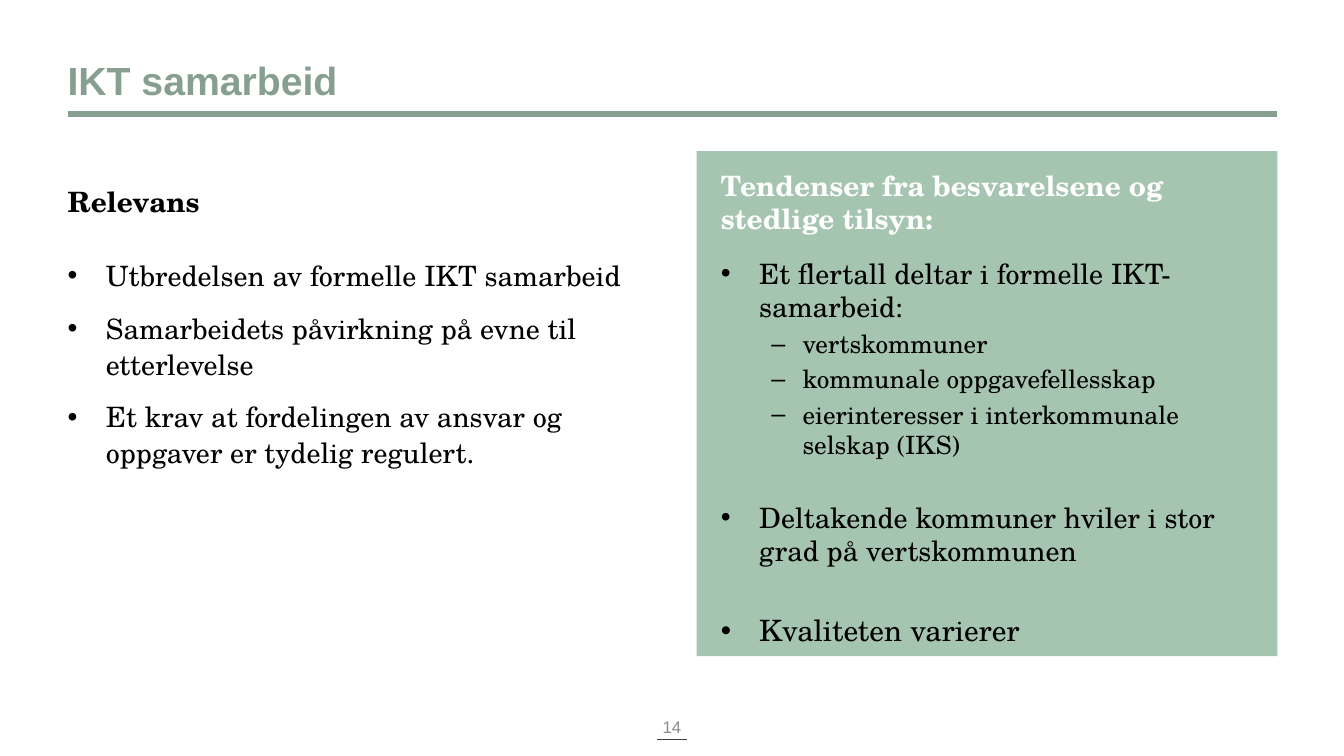
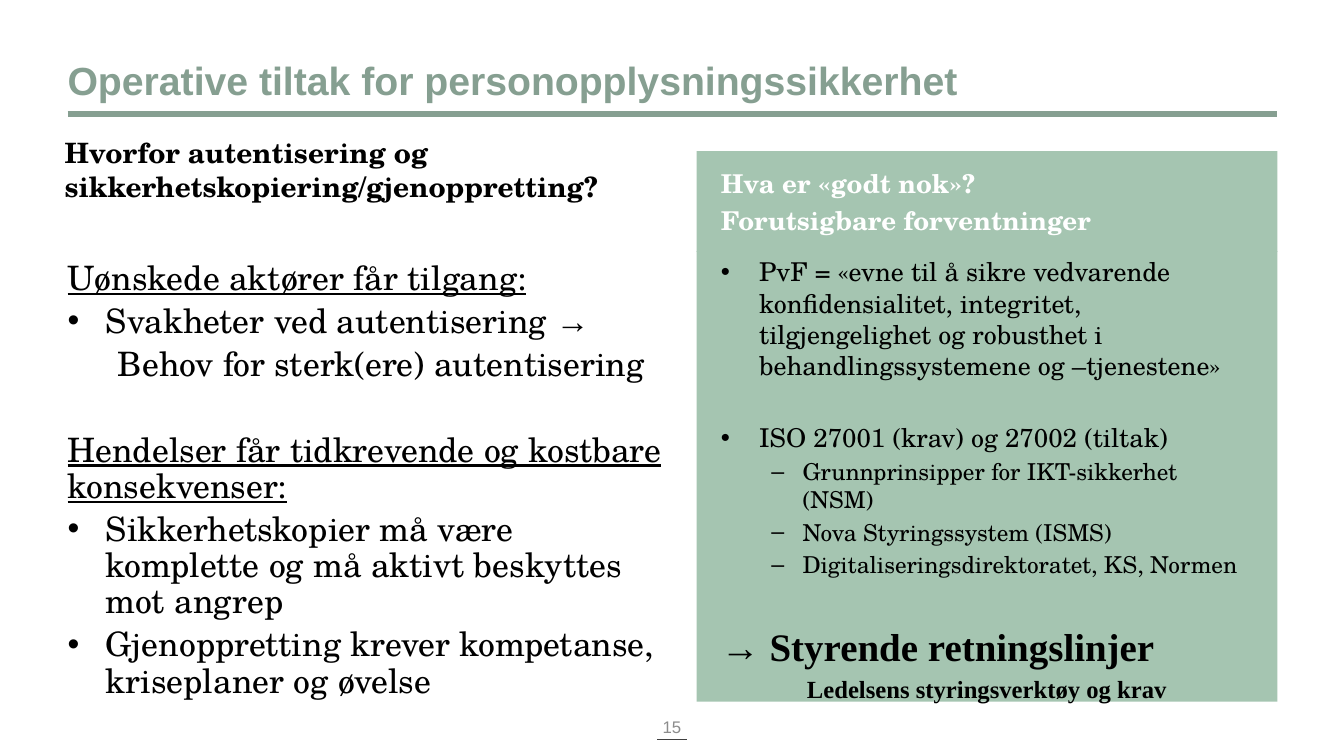
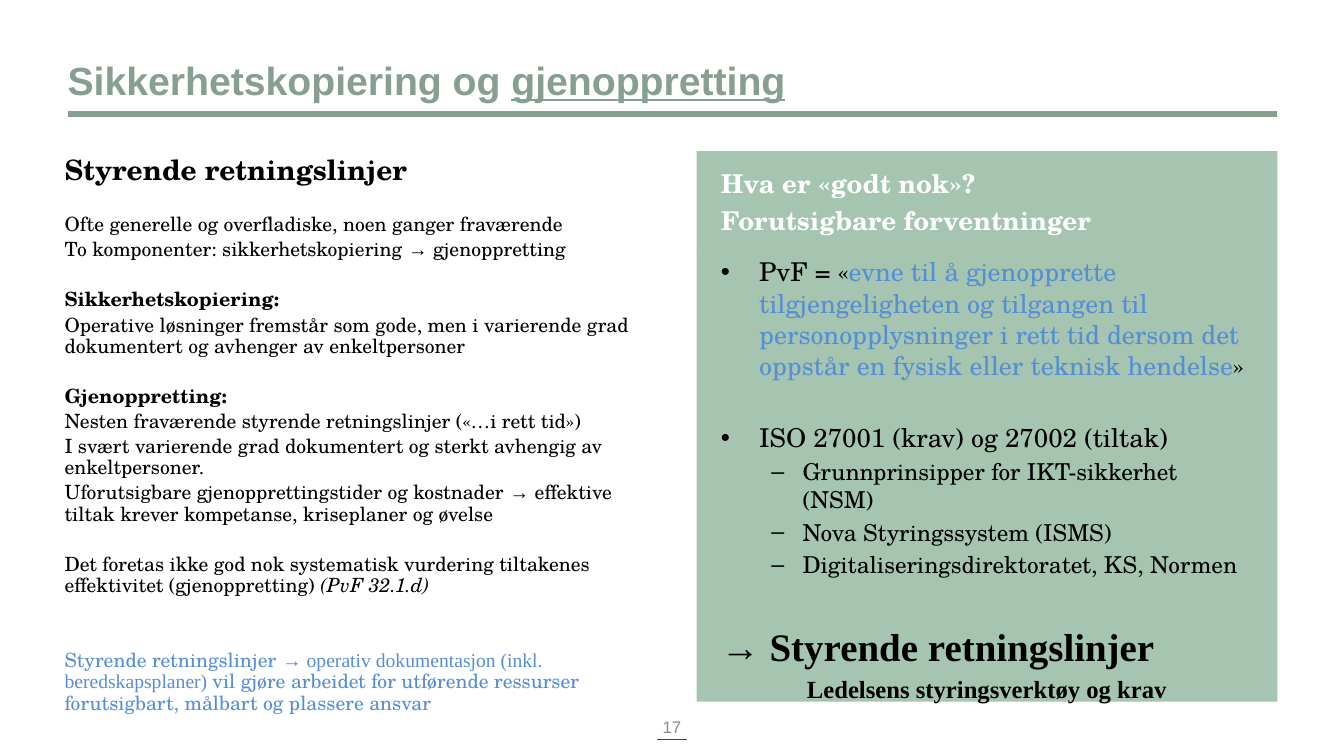
from lxml.etree import SubElement
from pptx import Presentation
from pptx.dml.color import RGBColor as RGB
from pptx.enum.shapes import MSO_CONNECTOR as LINE
from pptx.enum.text import MSO_ANCHOR as ANCHOR, MSO_AUTO_SIZE as AUTO, PP_ALIGN as ALIGN
from pptx.oxml.ns import qn
from pptx.util import Inches, Pt

COLORS = {"sage": "869F91", "panel": "A5C5B1", "black": "000000", "white": "FFFFFF",
          "blue": "558ED5", "grey": "8C8C8C", "dark": "404040"}
SCHOLA, TIMES, ARIAL = "TeX Gyre Schola", "Times New Roman", "Arial"

# Paragraph kinds: outline level, left margin, first-line indent, bullet
KINDS = {"plain": (0, 0, 0, None), "inset": (0, 0.5, 0, None),
         "item": (0, 0.38, -0.38, "•"), "sub": (1, 0.81, -0.31, "–")}

# Content: paragraphs are (kind, text or runs, format);
# "skip" is the total point size of the empty lines left above
ARROW = ("→", {"name": TIMES})
BLUE = {"color": "blue"}
BOLD = {"bold": True}
UNDER = {"underline": True}

EXPECT_HEAD = [("plain", "Hva er «godt nok»?", {}),
               ("plain", "Forutsigbare forventninger", {})]


def expectations(quote):
    """The panel text shared by the slides on expectations."""
    sub, big = {"size": 16.6}, {"name": TIMES, "bold": True}
    return [
        ("item", quote, {}),
        ("item", "ISO 27001 (krav) og 27002 (tiltak)", {"skip": 18.5}),
        ("sub", "Grunnprinsipper for IKT-sikkerhet (NSM)", sub),
        ("sub", "Nova Styringssystem (ISMS)", sub),
        ("sub", "Digitaliseringsdirektoratet, KS, Normen", sub),
        ("plain", "→ Styrende retningslinjer", {**big, "size": 27.8, "skip": 18.5}),
        ("plain", "Ledelsens styringsverktøy og krav",
         {**big, "size": 17.6, "align": ALIGN.CENTER}),
    ]


SLIDES = [
    {"number": "14",
     "title": "IKT samarbeid",
     "left_head": [("plain", "Relevans", {})],
     "left": [
         ("item", "Utbredelsen av formelle IKT samarbeid", {}),
         ("item", "Samarbeidets påvirkning på evne til etterlevelse", {}),
         ("item", "Et krav at fordelingen av ansvar og oppgaver er tydelig regulert.", {})],
     "right_head": [("plain", "Tendenser fra besvarelsene og stedlige tilsyn:", {})],
     "right": [
         ("item", "Et flertall deltar i formelle IKT-samarbeid:", {}),
         ("sub", "vertskommuner", {"size": 18}),
         ("sub", "kommunale oppgavefellesskap", {"size": 18}),
         ("sub", "eierinteresser i interkommunale selskap (IKS)", {"size": 18}),
         ("item", "Deltakende kommuner hviler i stor grad på vertskommunen", {"skip": 18}),
         ("item", "Kvaliteten varierer", {"size": 21, "skip": 20})],
     "left_head_at": (0.67, 1.5), "left_at": (0.67, 2.49, 5.79, 4.02),
     "left_format": {"size": 20, "spacing": 1.07, "after": 8},
     "panel_height": 4.02, "panel_size": 20},
    {"number": "15",
     "title": "Operative tiltak for personopplysningssikkerhet",
     "left_head": [
         ("plain", "Hvorfor autentisering og sikkerhetskopiering/gjenoppretting?", {})],
     "left": [
         ("plain", "Uønskede aktører får tilgang:", UNDER),
         ("item", [("Svakheter ved autentisering ", {}), ARROW], {}),
         ("inset", "Behov for sterk(ere) autentisering", {}),
         ("plain", "Hendelser får tidkrevende og kostbare konsekvenser:",
          {**UNDER, "skip": 24}),
         ("item", "Sikkerhetskopier må være komplette og må aktivt beskyttes mot angrep", {}),
         ("item", "Gjenoppretting krever kompetanse, kriseplaner og øvelse", {})],
     "right_head": EXPECT_HEAD,
     "right": expectations(
         "PvF = «evne til å sikre vedvarende konfidensialitet, integritet, tilgjengelighet "
         "og robusthet i behandlingssystemene og –tjenestene»"),
     "left_head_at": (0.64, 1.18), "left_at": (0.67, 2.54, 6, 4.22),
     "left_format": {"size": 24, "spacing": 0.9},
     "panel_height": 4.47, "panel_size": 18.5},
    {"number": "17",
     "title": [("Sikkerhetskopiering og ", {}), ("gjenoppretting", UNDER)],
     "left_head": [("plain", "Styrende retningslinjer", {})],
     "left": [
         ("plain", "Ofte generelle og overfladiske, noen ganger fraværende", {}),
         ("plain", [("To komponenter: sikkerhetskopiering ", {}), ARROW,
                    (" gjenoppretting", {})], {}),
         ("plain", "Sikkerhetskopiering:", {**BOLD, "skip": 14}),
         ("plain", "Operative løsninger fremstår som gode, men i varierende grad "
                   "dokumentert og avhenger av enkeltpersoner", {}),
         ("plain", "Gjenoppretting:", {**BOLD, "skip": 14}),
         ("plain", "Nesten fraværende styrende retningslinjer («…i rett tid»)", {}),
         ("plain", "I svært varierende grad dokumentert og sterkt avhengig av "
                   "enkeltpersoner.", {}),
         ("plain", [("Uforutsigbare gjenopprettingstider og kostnader ", {}), ARROW,
                    (" effektive tiltak krever kompetanse, kriseplaner og øvelse", {})], {}),
         ("plain", [("Det foretas ikke god nok systematisk vurdering tiltakenes "
                     "effektivitet (gjenoppretting) ", {}),
                    ("(PvF 32.1.d)", {"italic": True})], {"skip": 14}),
         ("plain", [("Styrende retningslinjer ", {}),
                    ("→ operativ dokumentasjon (inkl. beredskapsplaner) ", {"name": TIMES}),
                    ("vil gjøre arbeidet for utførende ressurser forutsigbart, målbart og "
                     "plassere ansvar", {})], {**BLUE, "skip": 28})],
     "right_head": EXPECT_HEAD,
     "right": expectations([
         ("PvF = «", {}),
         ("evne til å gjenopprette tilgjengeligheten og tilgangen til personopplysninger i "
          "rett tid dersom det oppstår en fysisk eller teknisk hendelse", BLUE),
         ("»", {})]),
     "left_head_at": (0.64, 1.18), "left_at": (0.64, 2.08, 6, 4.22),
     "left_format": {"size": 14, "spacing": 0.9},
     "panel_height": 4.47, "panel_size": 18.5},
]

# Shared geometry, in inches
WIDTH, HEIGHT, MARGIN = 13.33, 7.5, 0.67
RULE_Y, PANEL_X, PANEL_Y, PANEL_W, HEAD_H = 1.13, 6.91, 1.5, 5.76, 1
HEAD_W = 5.79
TEXT_INSETS, PANEL_INSETS = (0, 0.1), (0.24, 0.24)
BASE = {"name": SCHOLA, "color": "black", "bold": False, "spacing": 1, "after": 0,
        "skip": 0, "align": ALIGN.LEFT}


def rgb(key):
    return RGB.from_string(COLORS[key])


def format_paragraph(p, kind, fmt, first):
    level, margin, indent, bullet = KINDS[kind]
    pPr = p._p.get_or_add_pPr()
    pPr.set("marL", str(Inches(margin)))
    pPr.set("indent", str(Inches(indent)))
    if bullet:
        SubElement(pPr, qn("a:buChar")).set("char", bullet)
    else:
        SubElement(pPr, qn("a:buNone"))
    lead = 0.2 * fmt["size"] + fmt["skip"] * (1.2 * fmt["spacing"] + 0.2)
    values = {"level": level, "alignment": fmt["align"], "line_spacing": float(fmt["spacing"]),
              "space_before": Pt(0 if first else round(lead, 1)),
              "space_after": Pt(fmt["after"])}
    for name, value in values.items():
        setattr(p, name, value)


def fill_text(sp, paragraphs, defaults, insets=TEXT_INSETS, anchor=ANCHOR.TOP):
    tf = sp.text_frame
    frame = {"word_wrap": True, "auto_size": AUTO.NONE, "vertical_anchor": anchor,
             "margin_left": Inches(insets[0]), "margin_right": Inches(insets[1]),
             "margin_top": Inches(0.05), "margin_bottom": Inches(0.05)}
    for name, value in frame.items():
        setattr(tf, name, value)
    for i, (kind, runs, own) in enumerate(paragraphs):
        p = tf.add_paragraph() if i else tf.paragraphs[0]
        fmt = {**BASE, **defaults, **own}
        format_paragraph(p, kind, fmt, first=i == 0)
        for text, extra in [(runs, {})] if isinstance(runs, str) else runs:
            r = p.add_run()
            r.text = text
            look = {**fmt, **extra}
            r.font.size = Pt(look["size"])
            r.font.color.rgb = rgb(look["color"])
            for name in ("name", "bold", "italic", "underline"):
                if name in look:
                    setattr(r.font, name, look[name])


def place(sp, left, top, width, height, fill=None):
    sp.left, sp.top, sp.width, sp.height = map(Inches, (left, top, width, height))
    if fill:
        sp.fill.solid()
        sp.fill.fore_color.rgb = rgb(fill)
    return sp


def add_line(s, x1, x2, y, color, weight):
    ln = s.shapes.add_connector(LINE.STRAIGHT, *map(Inches, (x1, y, x2, y)))
    ln.line.color.rgb = rgb(color)
    ln.line.width = Pt(weight)
    SubElement(ln._element.spPr, qn("a:effectLst"))


def add_frame(s, title, number):
    """Title, rule and page number, alike on every slide."""
    add_line(s, MARGIN, MARGIN + 12, RULE_Y, "sage", 4.5)
    add_line(s, 6.52, 6.81, 7.34, "dark", 0.5)
    sp = place(s.shapes.title, MARGIN, 0.46, 12, RULE_Y - 0.46)
    fill_text(sp, [("plain", title, {})],
              {"name": ARIAL, "size": 28, "color": "sage", "bold": True},
              anchor=ANCHOR.MIDDLE)
    sp = s.shapes.add_textbox(*map(Inches, ((WIDTH - 3.11) / 2, 7.01, 3.11, 0.4)))
    fill_text(sp, [("plain", number, {})],
              {"name": ARIAL, "size": 12, "color": "grey", "align": ALIGN.CENTER},
              insets=(0.1, 0.1), anchor=ANCHOR.MIDDLE)


def build_slide(prs, data):
    s = prs.slides.add_slide(prs.slide_layouts.get_by_name("Comparison"))
    add_frame(s, data["title"], data["number"])
    left_head, left, right_head, right = (s.placeholders[i] for i in (1, 2, 3, 4))

    # Left column
    place(left_head, *data["left_head_at"], HEAD_W, HEAD_H)
    fill_text(left_head, data["left_head"], {"size": 20, **BOLD}, anchor=ANCHOR.MIDDLE)
    place(left, *data["left_at"])
    fill_text(left, data["left"], data["left_format"])

    # Green panel
    size = data["panel_size"]
    place(right_head, PANEL_X, PANEL_Y, PANEL_W, HEAD_H, "panel")
    fill_text(right_head, data["right_head"], {"size": size, "color": "white", **BOLD},
              PANEL_INSETS, ANCHOR.MIDDLE)
    place(right, PANEL_X, PANEL_Y + HEAD_H - 0.01, PANEL_W, data["panel_height"], "panel")
    fill_text(right, data["right"], {"size": size}, PANEL_INSETS)


def main():
    prs = Presentation()
    prs.slide_width, prs.slide_height = Inches(WIDTH), Inches(HEIGHT)
    for data in SLIDES:
        build_slide(prs, data)
    prs.save("out.pptx")


if __name__ == "__main__":
    main()
